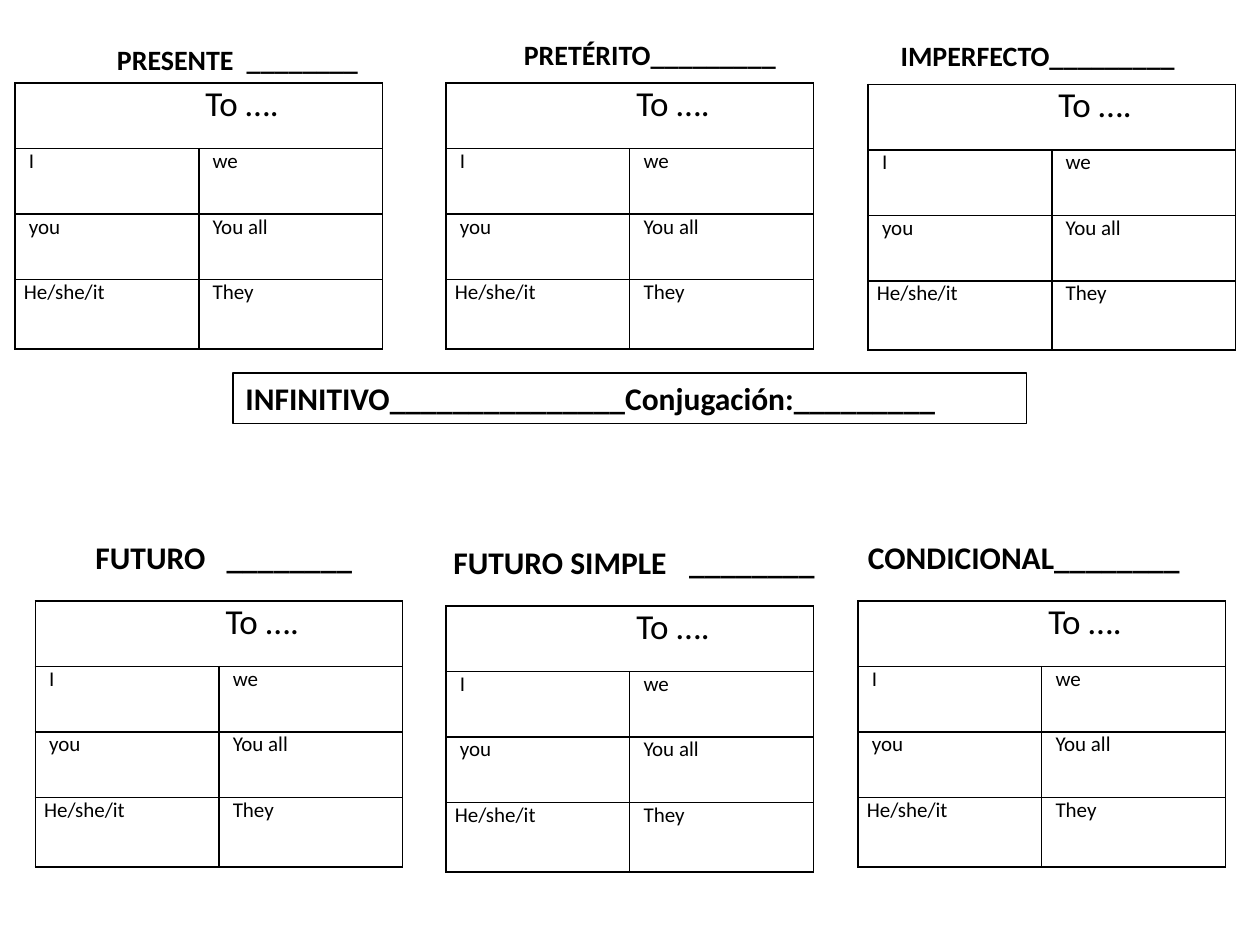
from dataclasses import dataclass

from lxml.etree import SubElement
from pptx import Presentation
from pptx.dml.color import RGBColor
from pptx.enum.shapes import MSO_SHAPE as Shape
from pptx.enum.text import MSO_ANCHOR as Anchor, PP_ALIGN as Align
from pptx.oxml import parse_xml
from pptx.oxml.ns import nsdecls, qn
from pptx.util import Inches, Pt


@dataclass(frozen=True)
class Theme:
    font: str = "Calibri"
    ink: str = "000000"
    cell: int = 12
    verb: int = 20
    upper_title: int = 16
    lower_title: int = 18
    banner: int = 18
    frame: float = 0.75
    border: int = 1


theme = Theme()
ink = RGBColor.from_string(theme.ink)

presentation = Presentation()
presentation.slide_width, presentation.slide_height = Inches(10), Inches(7.5)
slide = presentation.slides.add_slide(presentation.slide_layouts[6])

# The grid has 100 columns and 75 rows
COLUMN = presentation.slide_width / 100
ROW = presentation.slide_height / 75


def place(left, top, width, height):
    return (round(left * COLUMN), round(top * ROW),
            round(width * COLUMN), round(height * ROW))


def write(frame, text, size, bold=False, indent=0, tab=0):
    """Write one left-aligned run; indent and tab are in grid columns."""
    frame.word_wrap = True
    paragraph = frame.paragraphs[0]
    paragraph.alignment = Align.LEFT
    run = paragraph.add_run()
    run.text = text
    run.font.name, run.font.size, run.font.bold = theme.font, Pt(size), bold
    run.font.color.rgb = ink
    properties = paragraph._p.get_or_add_pPr()
    properties.set("marL", str(round(indent * COLUMN)))
    if tab:
        tabs = SubElement(properties, qn("a:tabLst"))
        SubElement(tabs, qn("a:tab"), pos=str(round(tab * COLUMN)), algn="l")


# Tense titles: text, left, top, width, height, size, tab
titles = [
    ("PRESENTE\t________", 8.3, 2.9, 21.9, 3.7, theme.upper_title, 10.3),
    ("PRETÉRITO_________", 40.6, 2.5, 24.4, 3.7, theme.upper_title, 0),
    ("IMPERFECTO_________", 70.5, 2.6, 26, 3.7, theme.upper_title, 0),
    ("FUTURO\t________", 6.6, 4.22 * 10, 22.6, 4, theme.lower_title, 10.4),
    ("FUTURO SIMPLE\t________", 35, 42.6, 31.1, 4, theme.lower_title, 18.7),
    ("CONDICIONAL________", 67.9, 42.2, 31.1, 4, theme.lower_title, 0),
]
for text, left, top, width, height, size, tab in titles:
    title = slide.shapes.add_textbox(*place(left, top, width, height))
    write(title.text_frame, text, size, bold=True, tab=tab)

# Infinitive banner
banner = slide.shapes.add_shape(Shape.RECTANGLE, *place(18.5, 29.6, 63, 4))
banner.shadow.inherit = False
banner.fill.background()
banner.line.color.rgb = ink
banner.line.width = Pt(theme.frame)
banner.text_frame.vertical_anchor = Anchor.TOP
write(banner.text_frame, "INFINITIVO_______________Conjugación:_________",
      theme.banner, bold=True)

# Conjugation tables: text, size and indent of every cell
VERB_INDENT, PRONOUN_INDENT = 14.4, 0.4
cell_rows = [
    [("To ….", theme.verb, VERB_INDENT), None],
    [("I", theme.cell, PRONOUN_INDENT), ("we", theme.cell, PRONOUN_INDENT)],
    [("you", theme.cell, PRONOUN_INDENT), ("You all", theme.cell, PRONOUN_INDENT)],
    [("He/she/it", theme.cell, 0), ("They", theme.cell, PRONOUN_INDENT)],
]
row_heights = [5.2, 5.2, 5.2, 5.5]
table_width = 29.15
table_corners = [(1.2, 6.6), (35.4, 6.6), (68.9, 6.7),
                 (2.8, 47.7), (35.4, 48.1), (68.1, 47.7)]

for left, top in table_corners:
    table = slide.shapes.add_table(
        len(cell_rows), 2, *place(left, top, table_width, sum(row_heights))).table
    table.first_row = table.horz_banding = False
    for column in table.columns:
        column.width = round(table_width / 2 * COLUMN)
    table.cell(0, 0).merge(table.cell(0, 1))

    for row_index, contents in enumerate(cell_rows):
        table.rows[row_index].height = round(row_heights[row_index] * ROW)
        for column_index, content in enumerate(contents):
            cell = table.cell(row_index, column_index)
            cell.margin_left = cell.margin_right = round(0.7 * COLUMN)
            cell.margin_top = cell.margin_bottom = 0
            cell.fill.background()
            for position, side in enumerate(("lnL", "lnR", "lnT", "lnB")):
                cell._tc.get_or_add_tcPr().insert(position, parse_xml(
                    f'<a:{side} {nsdecls("a")} w="{Pt(theme.border)}"><a:solidFill>'
                    f'<a:srgbClr val="{theme.ink}"/></a:solidFill></a:{side}>'))
            if content:
                text, size, indent = content
                write(cell.text_frame, text, size, indent=indent)

presentation.save("out.pptx")
